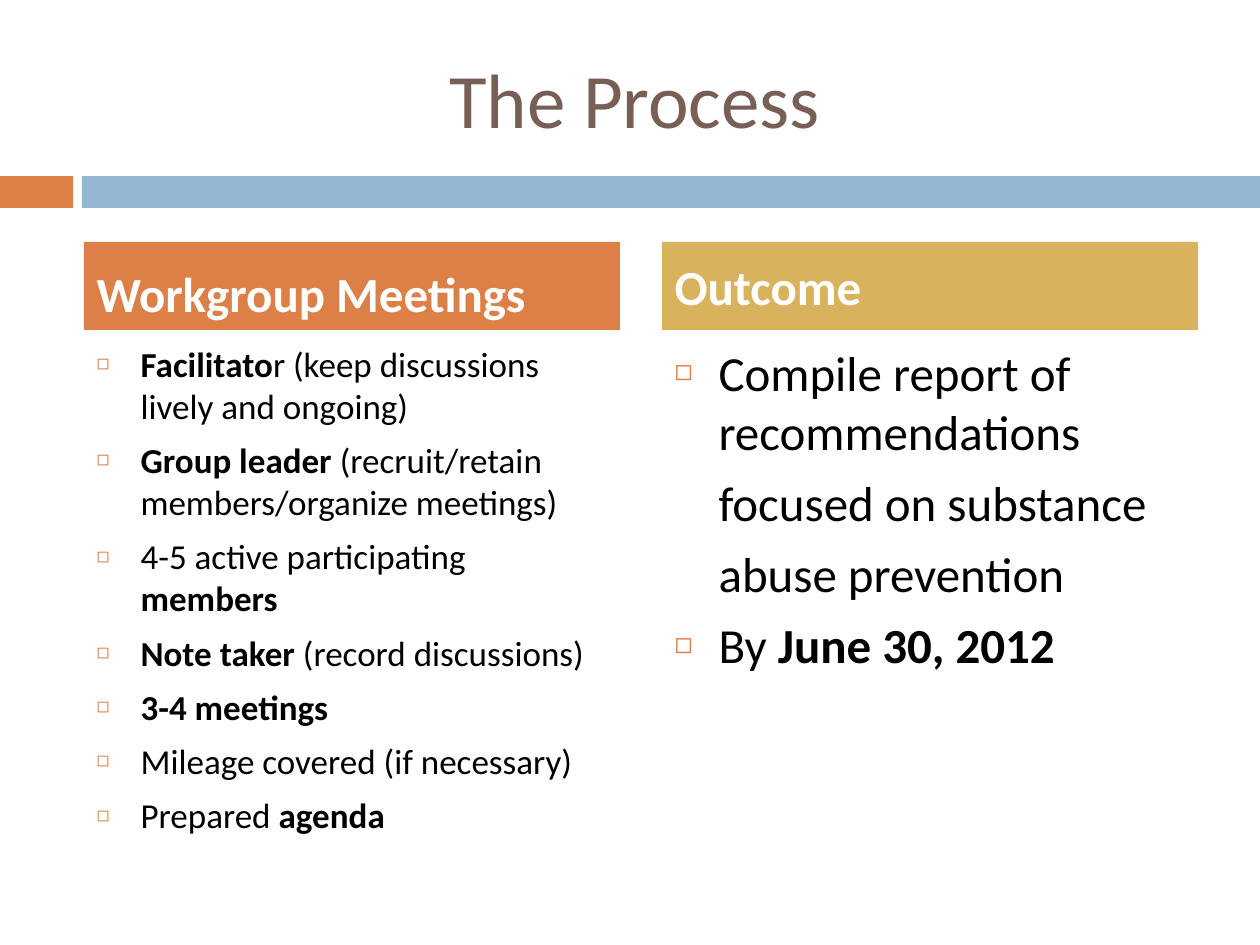
"""Build the slide on the workgroup process and its outcome."""
from dataclasses import dataclass
from typing import Any, NamedTuple

from lxml.etree import SubElement
from pptx import Presentation
from pptx.dml.color import RGBColor
from pptx.enum.shapes import MSO_SHAPE
from pptx.enum.text import MSO_ANCHOR, MSO_AUTO_SIZE, PP_ALIGN
from pptx.oxml.ns import qn
from pptx.util import Emu, Pt


@dataclass(frozen=True)
class Theme:
    font: str = "Calibri"
    orange: str = "DD8047"
    blue: str = "94B6D2"
    gold: str = "D8B25C"
    brown: str = "775F55"
    black: str = "000000"
    white: str = "FFFFFF"
    title_size: int = 44
    large_size: int = 28
    list_size: int = 20
    space_before: int = 7
    bullet: str = "◻"
    bullet_percent: int = 60


class Box(NamedTuple):
    left: int
    top: int
    width: int
    height: int


class Phrase(NamedTuple):
    text: str
    bold: bool = False


class Line(NamedTuple):
    phrases: tuple[Phrase, ...]
    bulleted: bool = True


class Bar(NamedTuple):
    box: Box
    color: str


class Column(NamedTuple):
    left: int
    heading: str
    heading_color: str
    heading_frame: dict[str, Any]
    list_size: int
    lines: tuple[Line, ...]


THEME = Theme()
EMU_PER_PX = 914400 / 126
HANGING_INDENT = 44
TITLE_BOX = Box(73, 38, 1124, 120)
COLUMN_WIDTH = 536
HEADING_TOP, HEADING_HEIGHT = 242, 88
LIST_TOP, LIST_HEIGHT = 336, 494


def px(length: int) -> Emu:
    """Turn pixels into EMU."""
    return Emu(round(length * EMU_PER_PX))


def apply(target: Any, values: dict[str, Any]) -> None:
    """Set each named format value on the target."""
    for name, value in values.items():
        setattr(target, name, value)


def place(shape: Any, box: Box) -> None:
    """Move and size a shape."""
    apply(shape, {name: px(length) for name, length in zip(("left", "top", "width", "height"), box)})


def fill(shape: Any, color: str) -> None:
    """Fill a shape with one colour."""
    shape.fill.solid()
    shape.fill.fore_color.rgb = RGBColor.from_string(color)


def add_run(paragraph: Any, phrase: Phrase, size: int, color: str) -> None:
    """Add a formatted run to a paragraph."""
    run = paragraph.add_run()
    run.text = phrase.text
    apply(run.font, {"name": THEME.font, "size": Pt(size), "bold": phrase.bold})
    run.font.color.rgb = RGBColor.from_string(color)


def set_bullet(paragraph: Any, bulleted: bool) -> None:
    """Give a paragraph its indent and its bullet, if any."""
    properties = paragraph._p.get_or_add_pPr()
    properties.set("marL", str(px(HANGING_INDENT)))
    properties.set("indent", str(px(-HANGING_INDENT if bulleted else 0)))
    if not bulleted:
        SubElement(properties, qn("a:buNone"))
        return
    color = SubElement(properties, qn("a:buClr"))
    SubElement(color, qn("a:srgbClr")).set("val", THEME.orange)
    SubElement(properties, qn("a:buSzPct")).set("val", str(THEME.bullet_percent * 1000))
    SubElement(properties, qn("a:buChar")).set("char", THEME.bullet)


def draw_bar(slide: Any, bar: Bar) -> None:
    """Draw one section of the band under the title."""
    band = slide.shapes.add_shape(MSO_SHAPE.RECTANGLE, *map(px, bar.box))
    band.shadow.inherit = False
    fill(band, bar.color)
    band.line.fill.background()


def write_title(title: Any, text: str) -> None:
    """Write the slide title."""
    place(title, TITLE_BOX)
    apply(title.text_frame, {"vertical_anchor": MSO_ANCHOR.MIDDLE, "auto_size": MSO_AUTO_SIZE.NONE})
    paragraph = title.text_frame.paragraphs[0]
    paragraph.alignment = PP_ALIGN.CENTER
    add_run(paragraph, Phrase(text), THEME.title_size, THEME.brown)


def write_column(heading: Any, body: Any, column: Column) -> None:
    """Write a coloured heading and the list below it."""
    place(heading, Box(column.left, HEADING_TOP, COLUMN_WIDTH, HEADING_HEIGHT))
    fill(heading, column.heading_color)
    apply(heading.text_frame, {"auto_size": MSO_AUTO_SIZE.NONE, **column.heading_frame})
    caption = heading.text_frame.paragraphs[0]
    caption.space_before = Pt(THEME.space_before)
    add_run(caption, Phrase(column.heading, True), THEME.large_size, THEME.white)

    place(body, Box(column.left, LIST_TOP, COLUMN_WIDTH, LIST_HEIGHT))
    frame = body.text_frame
    apply(frame, {"auto_size": MSO_AUTO_SIZE.NONE, "vertical_anchor": MSO_ANCHOR.TOP})
    for index, line in enumerate(column.lines):
        paragraph = frame.add_paragraph() if index else frame.paragraphs[0]
        paragraph.space_before = Pt(THEME.space_before)
        set_bullet(paragraph, line.bulleted)
        for phrase in line.phrases:
            add_run(paragraph, phrase, column.list_size, THEME.black)


BARS = (
    Bar(Box(0, 176, 73, 32), THEME.orange),
    Bar(Box(82, 176, 1178, 32), THEME.blue),
)
MEETINGS = Column(
    84, "Workgroup Meetings", THEME.orange,
    {"vertical_anchor": MSO_ANCHOR.TOP, "margin_top": px(22), "margin_bottom": px(0)},
    THEME.list_size,
    (
        Line((Phrase("Facilitato", True), Phrase("r (keep discussions lively and ongoing)"))),
        Line((Phrase("Group leader ", True), Phrase("(recruit/retain members/organize meetings)"))),
        Line((Phrase("4-5 active participating "), Phrase("members", True))),
        Line((Phrase("Note taker ", True), Phrase("(record discussions)"))),
        Line((Phrase("3-4 meetings", True),)),
        Line((Phrase("Mileage covered (if necessary)"),)),
        Line((Phrase("Prepared "), Phrase("agenda", True))),
    ),
)
OUTCOME = Column(
    662, "Outcome", THEME.gold, {"vertical_anchor": MSO_ANCHOR.MIDDLE}, THEME.large_size,
    (
        Line((Phrase("Compile report of recommendations"),)),
        Line((Phrase("focused on substance"),), bulleted=False),
        Line((Phrase("abuse prevention"),), bulleted=False),
        Line((Phrase("By "), Phrase("June 30, 2012", True))),
    ),
)


def main() -> None:
    """Build and save the presentation."""
    presentation = Presentation()
    apply(presentation, {"slide_width": px(1260), "slide_height": px(945)})
    slide = presentation.slides.add_slide(presentation.slide_layouts.get_by_name("Comparison"))
    title, meetings_heading, meetings_list, outcome_heading, outcome_list = slide.placeholders
    for bar in BARS:
        draw_bar(slide, bar)
    write_title(title, "The Process")
    write_column(meetings_heading, meetings_list, MEETINGS)
    write_column(outcome_heading, outcome_list, OUTCOME)
    presentation.save("out.pptx")


if __name__ == "__main__":
    main()
